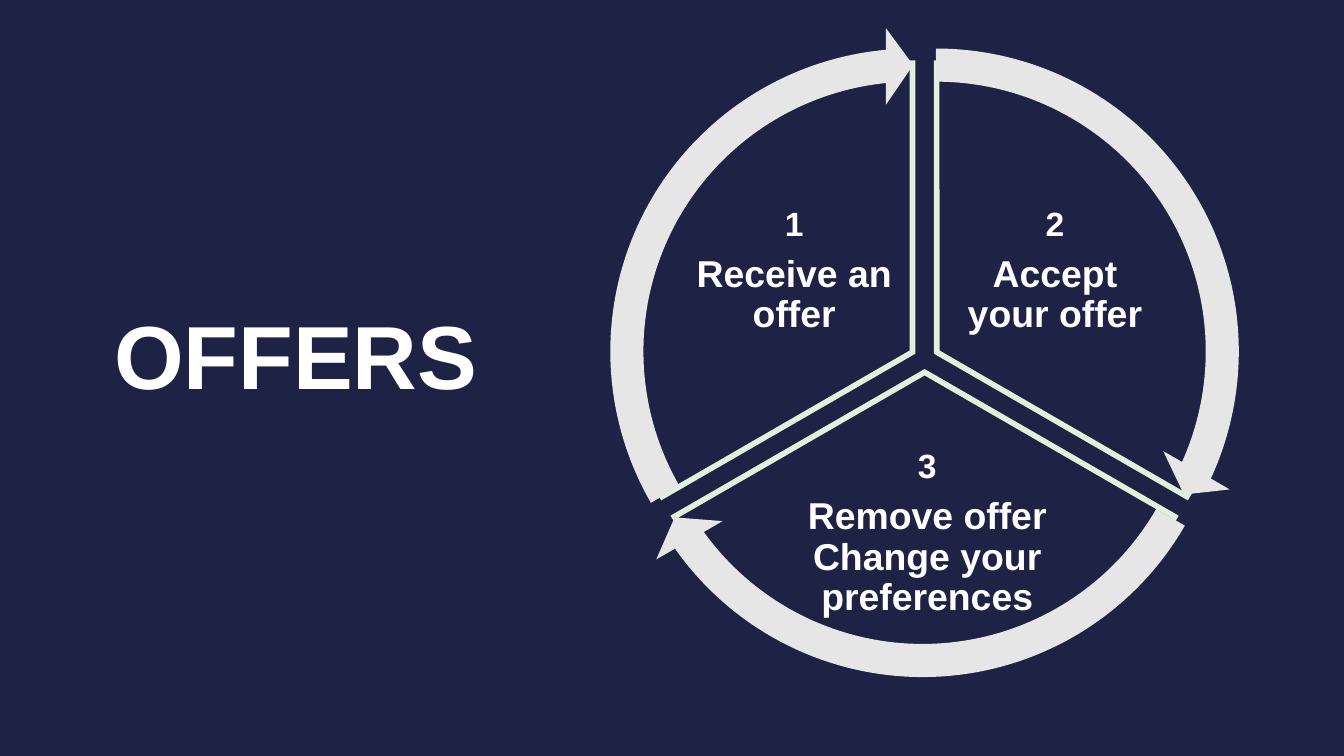
import dataclasses

import lxml.etree
import pptx
import pptx.dml.color
import pptx.enum.shapes
import pptx.enum.text
import pptx.oxml.ns
import pptx.util

Inches = pptx.util.Inches
Pt = pptx.util.Pt
ShapeType = pptx.enum.shapes.MSO_SHAPE
Align = pptx.enum.text.PP_ALIGN
Anchor = pptx.enum.text.MSO_ANCHOR

COLORS = {"navy": "1E2245", "mint": "DFF1DA", "grey": "E7E6E6", "white": "FFFFFF"}
SLIDE_WIDTH = 10
SLIDE_HEIGHT = SLIDE_WIDTH * 9 / 16
WEDGE_SIZE = 4.3
ARROW_SIZE = 4.83
ARROW_THICKNESS = 0.051
ARROW_HEAD_ANGLE = 3.275
ARROW_HEAD_WIDTH = 0.059
ANGLE_UNITS_PER_DEGREE = 0.6


@dataclasses.dataclass
class Step:
    number: str
    label: str
    start_degrees: int
    end_degrees: int
    wedge_position: tuple[float, float]
    arrow_position: tuple[float, float]
    text_box: tuple[float, float, float, float]

    @property
    def angles(self) -> tuple[float, float]:
        return (self.start_degrees * ANGLE_UNITS_PER_DEGREE,
                self.end_degrees * ANGLE_UNITS_PER_DEGREE)


STEPS = [
    Step("2", "Accept your offer", 270, 30, (4.82, 0.47), (4.55, 0.2),
         (7.08, 1.38, 1.54, 1.28)),
    Step("3", "Remove offer Change your preferences", 30, 150, (4.73, 0.62),
         (4.45, 0.37), (5.75, 3.41, 2.3, 1.13)),
    Step("1", "Receive an offer", 150, 270, (4.64, 0.47), (4.38, 0.2),
         (5.14, 1.38, 1.54, 1.28)),
]


def color(name: str) -> pptx.dml.color.RGBColor:
    return pptx.dml.color.RGBColor.from_string(COLORS[name])


def apply_format(target, values: dict) -> None:
    for name, value in values.items():
        setattr(target, name, value)


def format_font(font, size: int) -> None:
    apply_format(font, {"name": "Arial", "size": Pt(size), "bold": True})
    font.color.rgb = color("white")


def add_round_shape(cycle, shape_type, position: tuple[float, float], size: float,
                    fill: str, adjustments: list[float]):
    shape = cycle.shapes.add_shape(
        shape_type, *map(Inches, position), Inches(size), Inches(size))
    for index, value in enumerate(adjustments):
        shape.adjustments[index] = value
    shape.shadow.inherit = False
    shape.fill.solid()
    shape.fill.fore_color.rgb = color(fill)
    shape.line.fill.background()
    return shape


def add_wedge(cycle, step: Step) -> None:
    wedge = add_round_shape(cycle, ShapeType.PIE, step.wedge_position, WEDGE_SIZE,
                            "navy", list(step.angles))
    wedge.line.color.rgb = color("mint")
    wedge.line.width = Pt(3)
    outline = wedge.element.spPr.find(pptx.oxml.ns.qn("a:ln"))
    lxml.etree.SubElement(outline, pptx.oxml.ns.qn("a:miter"), lim="800000")


def add_arrow(cycle, step: Step) -> None:
    start, end = step.angles
    add_round_shape(
        cycle, ShapeType.CIRCULAR_ARROW, step.arrow_position, ARROW_SIZE, "grey",
        [ARROW_THICKNESS, ARROW_HEAD_ANGLE, end - ARROW_HEAD_ANGLE, start,
         ARROW_HEAD_WIDTH])


def add_step_text(cycle, step: Step) -> None:
    frame = cycle.shapes.add_textbox(*map(Inches, step.text_box)).text_frame
    margins = dict.fromkeys(
        ["margin_left", "margin_top", "margin_right", "margin_bottom"], Inches(0.03))
    apply_format(frame, {"word_wrap": True, "vertical_anchor": Anchor.MIDDLE, **margins})
    frame.text = f"{step.number}\n{step.label}"
    for paragraph, size in zip(frame.paragraphs, (18, 20)):
        apply_format(paragraph, {"alignment": Align.CENTER, "line_spacing": 0.9,
                                 "space_after": Pt(0.35 * size)})
        format_font(paragraph.runs[0].font, size)


def format_title(slide) -> None:
    title = slide.shapes.title
    apply_format(title, {"left": Inches(0.75), "top": Inches(2.18),
                         "width": Inches(2.93), "height": Inches(0.91)})
    frame = title.text_frame
    frame.text = "OFFERS"
    apply_format(frame, {"word_wrap": False, "vertical_anchor": Anchor.TOP,
                         "auto_size": pptx.enum.text.MSO_AUTO_SIZE.SHAPE_TO_FIT_TEXT})
    paragraph = frame.paragraphs[0]
    paragraph.alignment = Align.LEFT
    format_font(paragraph.runs[0].font, 48)


def main() -> None:
    presentation = pptx.Presentation()
    apply_format(presentation, {"slide_width": Inches(SLIDE_WIDTH),
                                "slide_height": Inches(SLIDE_HEIGHT)})
    slide = presentation.slides.add_slide(presentation.slide_layouts[5])
    slide.background.fill.solid()
    slide.background.fill.fore_color.rgb = color("navy")
    format_title(slide)
    cycle = slide.shapes.add_group_shape()
    for step in STEPS:
        add_wedge(cycle, step)
        add_step_text(cycle, step)
    for step in STEPS:
        add_arrow(cycle, step)
    presentation.save("out.pptx")


if __name__ == "__main__":
    main()
